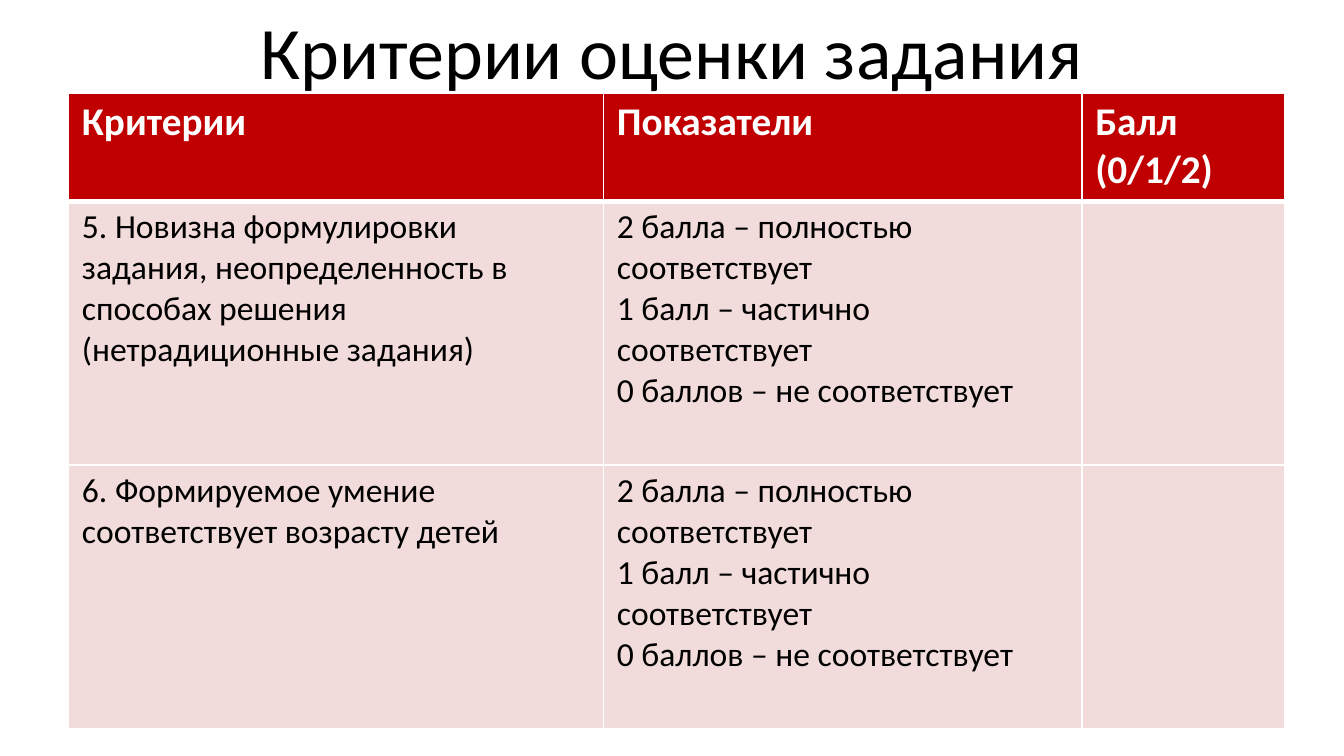
import lxml.etree
import pptx
import pptx.dml.color
import pptx.enum.text
import pptx.oxml.ns
import pptx.util

Inches = pptx.util.Inches
Pt = pptx.util.Pt

COLORS = {"header": "C00000", "body": "F2DCDB", "light": "FFFFFF", "dark": "000000"}
HEADERS = ["Критерии", "Показатели", "Балл (0/1/2)"]
CRITERIA = [
    "5. Новизна формулировки задания, неопределенность в способах решения "
    "(нетрадиционные задания)",
    "6. Формируемое умение соответствует возрасту детей",
]
SCALE = [
    "2 балла – полностью соответствует",
    "1 балл – частично соответствует",
    "0 баллов – не соответствует",
]


def rgb(name):
    return pptx.dml.color.RGBColor.from_string(COLORS[name])


class SlideBuilder:
    font = "Calibri"

    def __init__(self, page):
        self.page = page

    def add_span(self, para, text, size, color, bold=False):
        span = para.add_run()
        span.text = text
        span.font.name = self.font
        span.font.size = Pt(size)
        span.font.bold = bold
        span.font.color.rgb = rgb(color)

    def title(self, text, left, top, width, height):
        box = self.page.shapes.title
        box.left, box.top = Inches(left), Inches(top)
        box.width, box.height = Inches(width), Inches(height)
        frame = box.text_frame
        frame.auto_size = pptx.enum.text.MSO_AUTO_SIZE.NONE
        frame.vertical_anchor = pptx.enum.text.MSO_ANCHOR.MIDDLE
        para = frame.paragraphs[0]
        para.alignment = pptx.enum.text.PP_ALIGN.CENTER
        self.add_span(para, text, 39.6, "dark")

    def borders(self, cell, top, bottom):
        """Draw light cell borders; top and bottom are widths in points."""
        qn = pptx.oxml.ns.qn
        properties = cell._tc.get_or_add_tcPr()
        widths = {"lnL": 1, "lnR": 1, "lnT": top, "lnB": bottom}
        for index, (side, width) in enumerate(widths.items()):
            line = lxml.etree.Element(qn(f"a:{side}"), w=str(Pt(width)))
            fill = lxml.etree.SubElement(line, qn("a:solidFill"))
            lxml.etree.SubElement(fill, qn("a:srgbClr"), val=COLORS["light"])
            properties.insert(index, line)

    def cell(self, cell, lines, is_header):
        cell.fill.solid()
        cell.fill.fore_color.rgb = rgb("header" if is_header else "body")
        cell.margin_left = cell.margin_right = Inches(0.1)
        cell.margin_top = cell.margin_bottom = Inches(0.04)
        frame = cell.text_frame
        for index, text in enumerate(lines):
            para = frame.add_paragraph() if index else frame.paragraphs[0]
            if is_header:
                self.add_span(para, text, 21, "light", bold=True)
            else:
                self.add_span(para, text, 18, "dark")

    def table(self, rows, left, top, widths, heights):
        """Build a table from rows of cells, each cell a list of paragraphs."""
        frame = self.page.shapes.add_table(
            len(rows), len(widths), Inches(left), Inches(top),
            Inches(sum(widths)), Inches(sum(heights)))
        table = frame.table
        for column, width in zip(table.columns, widths):
            column.width = Inches(width)
        for row, height in zip(table.rows, heights):
            row.height = Inches(height)
        for r, row in enumerate(rows):
            for c, lines in enumerate(row):
                cell = table.cell(r, c)
                self.cell(cell, lines, is_header=r == 0)
                self.borders(cell, top=3 if r == 1 else 1, bottom=3 if r == 0 else 1)


def main():
    deck = pptx.Presentation()
    deck.slide_width = Inches(10)
    deck.slide_height = deck.slide_width * 9 // 16
    page = deck.slides.add_slide(deck.slide_layouts[5])
    builder = SlideBuilder(page)
    builder.title("Критерии оценки задания", 0.75, 0, 8.5, 0.75)
    rows = [[[header] for header in HEADERS]]
    rows += [[[criterion], SCALE, []] for criterion in CRITERIA]
    builder.table(rows, 0.51, 0.69, widths=[3.98, 3.56, 1.51], heights=[0.81, 1.96, 1.96])
    deck.save("out.pptx")


if __name__ == "__main__":
    main()
